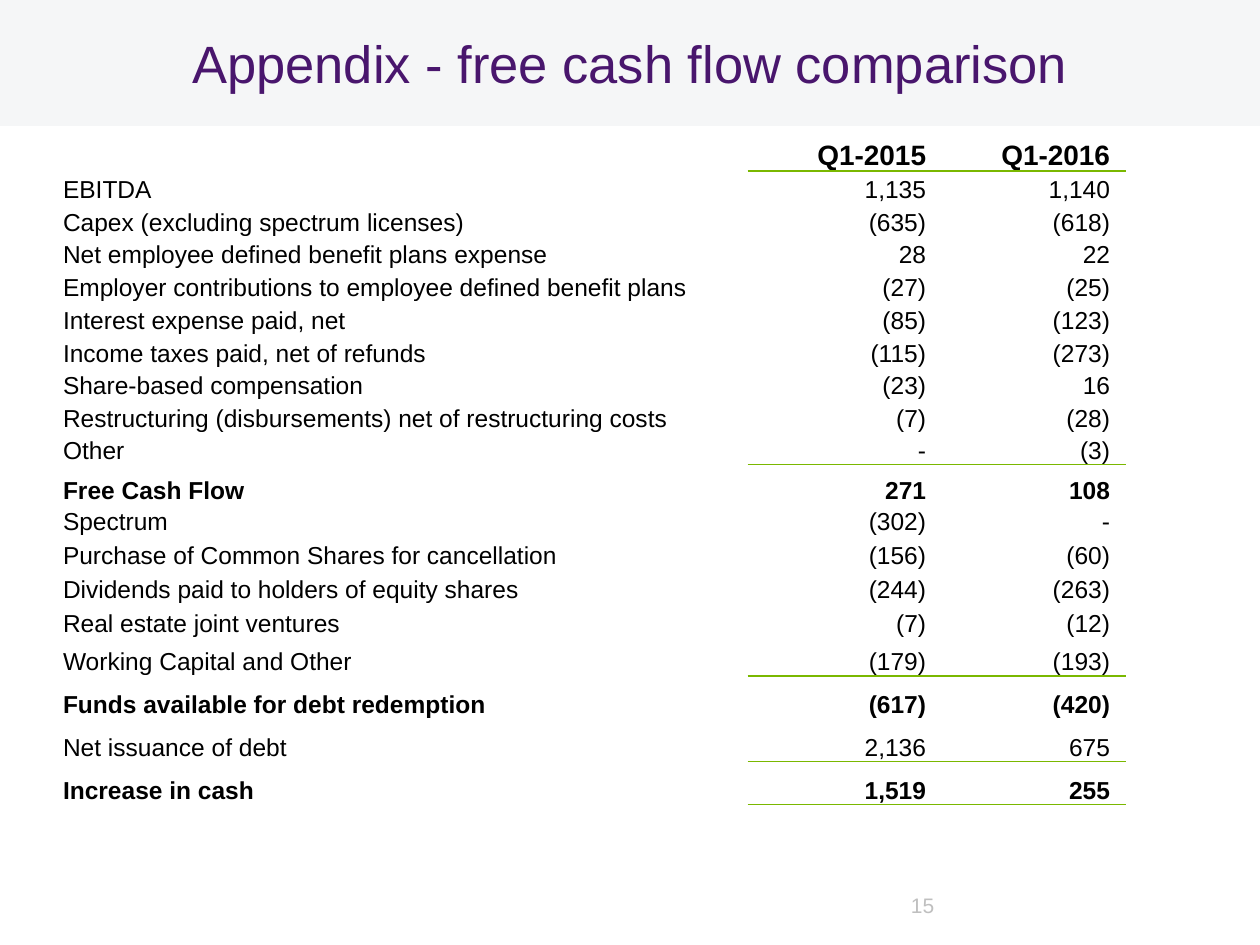
from typing import NamedTuple

from lxml.etree import SubElement
from pptx import Presentation
from pptx.dml.color import RGBColor
from pptx.enum.shapes import MSO_SHAPE
from pptx.enum.text import MSO_ANCHOR, PP_ALIGN
from pptx.oxml.ns import qn
from pptx.util import Emu, Inches, Pt

FONT = "Arial"
BLACK, WHITE, GREEN = "000000", "FFFFFF", "7AB800"
PURPLE, PALE, GREY = "49166D", "F5F6F7", "BFBFBF"
COLUMNS = (5.52, 1.53, 1.46)


class Line(NamedTuple):
    label: str
    q1_2015: str
    q1_2016: str
    height: float = 0.26
    bold: bool = False
    ruled: bool = False
    size: int = 14


LINES = [
    Line("", "Q1-2015", "Q1-2016", 0.24, bold=True, ruled=True, size=16),
    Line("EBITDA", "1,135", "1,140"),
    Line("Capex (excluding spectrum licenses)", "(635)", "(618)"),
    Line("Net employee defined benefit plans expense", "28", "22"),
    Line("Employer contributions to employee defined benefit plans", "(27)", "(25)"),
    Line("Interest expense paid, net", "(85)", "(123)"),
    Line("Income taxes paid, net of refunds", "(115)", "(273)"),
    Line("Share-based compensation", "(23)", "16"),
    Line("Restructuring (disbursements) net of restructuring costs", "(7)", "(28)"),
    Line("Other", "-", "(3)", 0.25, ruled=True),
    Line("Free Cash Flow", "271", "108", 0.32, bold=True),
    Line("Spectrum", "(302)", "-", 0.25),
    Line("Purchase of Common Shares for cancellation", "(156)", "(60)", 0.27),
    Line("Dividends paid to holders of equity shares", "(244)", "(263)", 0.27),
    Line("Real estate joint ventures", "(7)", "(12)", 0.27),
    Line("Working Capital and Other", "(179)", "(193)", 0.3, ruled=True),
    Line("Funds available for debt redemption", "(617)", "(420)", 0.34, bold=True),
    Line("Net issuance of debt", "2,136", "675", 0.34, ruled=True),
    Line("Increase in cash", "1,519", "255", 0.34, bold=True, ruled=True),
]


def rgb(color: str) -> RGBColor:
    return RGBColor.from_string(color)


def add_text(p, text: str, size: int, color: str, bold: bool = False,
             align=PP_ALIGN.LEFT) -> None:
    p.alignment = align
    r = p.add_run()
    r.text = text
    r.font.name, r.font.size, r.font.bold = FONT, Pt(size), bold
    r.font.color.rgb = rgb(color)


def set_frame(tf) -> None:
    """Centre the text vertically, with no insets."""
    tf.word_wrap = True
    tf.vertical_anchor = MSO_ANCHOR.MIDDLE
    tf.margin_left = tf.margin_top = tf.margin_right = tf.margin_bottom = 0


def add_title(s, prs, text: str) -> None:
    sp = s.shapes.add_shape(MSO_SHAPE.RECTANGLE, 0, 0, prs.slide_width, Inches(1))
    sp.shadow.inherit = False
    sp.fill.solid()
    sp.fill.fore_color.rgb = rgb(PALE)
    sp.line.fill.background()
    set_frame(sp.text_frame)
    add_text(sp.text_frame.paragraphs[0], text, 30, PURPLE, align=PP_ALIGN.CENTER)


def add_page_number(s, prs, number: str) -> None:
    height = Inches(0.64)
    sp = s.shapes.add_textbox(Inches(7.23), prs.slide_height - height,
                              Inches(2.36), height)
    set_frame(sp.text_frame)
    add_text(sp.text_frame.paragraphs[0], number, 12, GREY)


def set_borders(cell, top: str, bottom: str) -> None:
    tc_pr = cell._tc.get_or_add_tcPr()
    for side, color in zip("LRTB", (WHITE, WHITE, top, bottom)):
        ln = SubElement(tc_pr, qn(f"a:ln{side}"), w=str(Pt(1)))
        fill = SubElement(ln, qn("a:solidFill"))
        SubElement(fill, qn("a:srgbClr"), val=color)


def fill_cell(cell, text: str, line: Line, is_label: bool, ruled_above: bool) -> None:
    cell.vertical_anchor = MSO_ANCHOR.BOTTOM
    cell.margin_left = Inches(0.08 if is_label else 0.01)
    cell.margin_right = Inches(0.01 if is_label else 0.12)
    cell.margin_top, cell.margin_bottom = Inches(0.01), 0
    set_borders(cell, GREEN if ruled_above and not is_label else WHITE,
                GREEN if line.ruled and not is_label else WHITE)
    cell.fill.background()
    p = cell.text_frame.paragraphs[0]
    if text:
        add_text(p, text, line.size, BLACK, line.bold,
                 PP_ALIGN.LEFT if is_label else PP_ALIGN.RIGHT)
    else:
        SubElement(p._p, qn("a:endParaRPr"), sz="1400")


def add_cash_flow_table(s) -> None:
    heights = [Inches(line.height) for line in LINES]
    widths = [Inches(width) for width in COLUMNS]
    table = s.shapes.add_table(len(LINES), len(COLUMNS), Inches(0.42), Inches(1.08),
                               Emu(sum(widths)), Emu(sum(heights))).table
    table.first_row = table.horz_banding = False
    for column, width in zip(table.columns, widths):
        column.width = width
    ruled_above = False
    for row, line, height in zip(table.rows, LINES, heights):
        row.height = height
        texts = (line.label, line.q1_2015, line.q1_2016)
        for i, (cell, text) in enumerate(zip(row.cells, texts)):
            fill_cell(cell, text, line, i == 0, ruled_above)
        ruled_above = line.ruled


def main() -> None:
    prs = Presentation()
    prs.slide_width, prs.slide_height = Inches(10), Inches(7.5)
    s = prs.slides.add_slide(prs.slide_layouts[6])
    add_title(s, prs, "Appendix - free cash flow comparison")
    add_page_number(s, prs, "15")
    add_cash_flow_table(s)
    prs.save("out.pptx")


if __name__ == "__main__":
    main()
